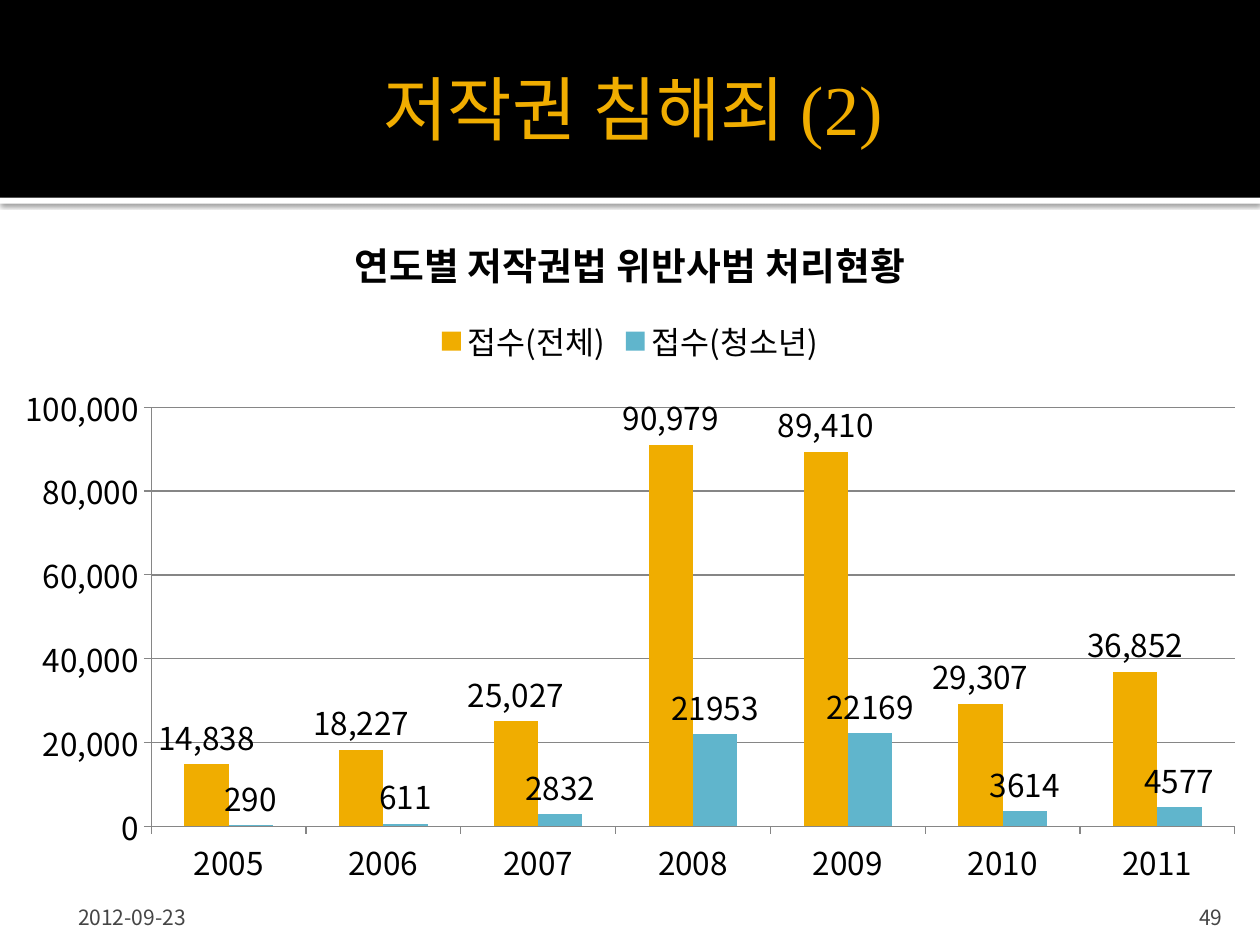
from dataclasses import dataclass

from lxml import etree
from pptx import Presentation
from pptx import util as u
from pptx.chart import data as cd
from pptx.dml.color import RGBColor
from pptx.enum import chart as ce, shapes, text
from pptx.oxml.ns import qn


@dataclass(frozen=True)
class Theme:
    gold: str = "F0AD00"
    teal: str = "60B5CC"
    black: str = "000000"
    white: str = "FFFFFF"
    gray: str = "454545"
    rule: str = "868686"
    sans: str = "Noto Sans CJK KR"
    serif: str = "Times New Roman"
    title: float = 40
    head: float = 21.6
    body: float = 18
    small: float = 12


T = Theme()
WIDE, HIGH = 10, 7.5
BAND = 1.57 / HIGH  # height of the title band as a share of the slide
YEARS = [str(y) for y in range(2005, 2012)]
CASES = [
    ("접수(전체)", T.gold, "#,##0",
     (14838, 18227, 25027, 90979, 89410, 29307, 36852)),
    ("접수(청소년)", T.teal, "General",
     (290, 611, 2832, 21953, 22169, 3614, 4577)),
]


def part(box, left, top, wide, high):
    """Box inside a box, given in shares of it."""
    x, y, w, h = box
    return x + left * w, y + top * h, wide * w, high * h


def emu(box):
    return [u.Inches(v) for v in box]


def rgb(code):
    return RGBColor.from_string(code)


def style(font, size, color, name=T.sans, bold=False):
    font.size, font.name, font.bold = u.Pt(size), name, bold
    font.color.rgb = rgb(color)


def bar(slide, box, color):
    shape = slide.shapes.add_shape(shapes.MSO_SHAPE.RECTANGLE, *emu(box))
    shape.shadow.inherit = False
    shape.fill.solid()
    shape.fill.fore_color.rgb = rgb(color)
    shape.line.fill.background()
    return shape


def shade(shape):
    """Soft shadow straight below a shape."""
    effect = shape._element.spPr.find(qn("a:effectLst"))
    outer = etree.SubElement(
        effect, qn("a:outerShdw"), blurRad=str(u.Pt(2.5)),
        dist=str(u.Pt(0.8)), dir="5400000", algn="tl", rotWithShape="0")
    color = etree.SubElement(outer, qn("a:srgbClr"), val=T.black)
    etree.SubElement(color, qn("a:alpha"), val="60000")


def label(slide, box, words, size, color, align, anchor, pads, name=T.sans):
    frame = slide.shapes.add_textbox(*emu(box)).text_frame
    frame.word_wrap = True
    frame.vertical_anchor = anchor
    (frame.margin_left, frame.margin_top,
     frame.margin_right, frame.margin_bottom) = emu(pads)
    frame.text = words
    line = frame.paragraphs[0]
    line.alignment = align
    run = line.runs[0]
    style(run.font, size, color, name)
    # Hangul keeps the sans face
    latin = run._r.rPr.find(qn("a:latin"))
    latin.addnext(latin.makeelement(qn("a:ea"), {"typeface": T.sans}))


def header(slide, box):
    # White strip with its shadow, then the black band
    shade(bar(slide, part(box, 0, 1, 1, 0.03), T.white))
    bar(slide, box, T.black)
    label(slide, part(box, 0.05, 0.11, 0.9, 0.87), "저작권 침해죄 (2)",
          T.title, T.gold, text.PP_ALIGN.CENTER, text.MSO_ANCHOR.MIDDLE,
          (0.1, 0.05, 0.05, 0.05), T.serif)


def footer(slide, box):
    low = text.MSO_ANCHOR.BOTTOM
    label(slide, part(box, 0.05, 0, 0.23, 1), "2012-09-23", T.small, T.gray,
          text.PP_ALIGN.LEFT, low, (0.12, 0.05, 0.05, 0))
    label(slide, part(box, 0.9, 0, 0.08, 1), "49", T.small, T.gray,
          text.PP_ALIGN.RIGHT, low, (0.1, 0.05, 0.1, 0))


def graph(slide, box):
    data = cd.CategoryChartData()
    data.categories = YEARS
    for name, _, form, vals in CASES:
        data.add_series(name, vals, form)
    chart = slide.shapes.add_chart(
        ce.XL_CHART_TYPE.COLUMN_CLUSTERED, *emu(box), data).chart
    style(chart.font, T.body, T.black)

    # Title and legend
    chart.has_title = True
    frame = chart.chart_title.text_frame
    frame.text = "연도별 저작권법 위반사범 처리현황"
    style(frame.paragraphs[0].runs[0].font, T.head, T.black, bold=True)
    chart.chart_title.include_in_layout = False
    chart.has_legend = True
    chart.legend.position = ce.XL_LEGEND_POSITION.TOP
    chart.legend.include_in_layout = False

    # Axes
    for axis in (chart.category_axis, chart.value_axis):
        axis.major_tick_mark = ce.XL_TICK_MARK.OUTSIDE
        axis.format.line.color.rgb = rgb(T.rule)
    axis.maximum_scale, axis.minimum_scale, axis.major_unit = 100000, 0, 20000
    axis.has_major_gridlines = True
    axis.major_gridlines.format.line.color.rgb = rgb(T.rule)
    axis.tick_labels.number_format = "#,##0"
    axis.tick_labels.number_format_is_linked = False

    # Columns and their values
    plot = chart.plots[0]
    plot.gap_width, plot.overlap = 150, 0
    plot.vary_by_categories = False
    for series, (_, color, form, _) in zip(plot.series, CASES):
        series.format.fill.solid()
        series.format.fill.fore_color.rgb = rgb(color)
        tags = series.data_labels
        tags.show_value = True
        tags.number_format, tags.number_format_is_linked = form, False
        tags.position = ce.XL_LABEL_POSITION.OUTSIDE_END
        style(tags.font, T.body, T.black)


def main():
    deck = Presentation()
    deck.slide_width, deck.slide_height = u.Inches(WIDE), u.Inches(HIGH)
    slide = deck.slides.add_slide(deck.slide_layouts[6])
    page = (0, 0, WIDE, HIGH)
    header(slide, part(page, 0, 0, 1, BAND))
    footer(slide, part(page, 0, 0.944, 1, 0.04))
    graph(slide, part(page, 0, 0.216, 1, 0.735))
    deck.save("out.pptx")


if __name__ == "__main__":
    main()
